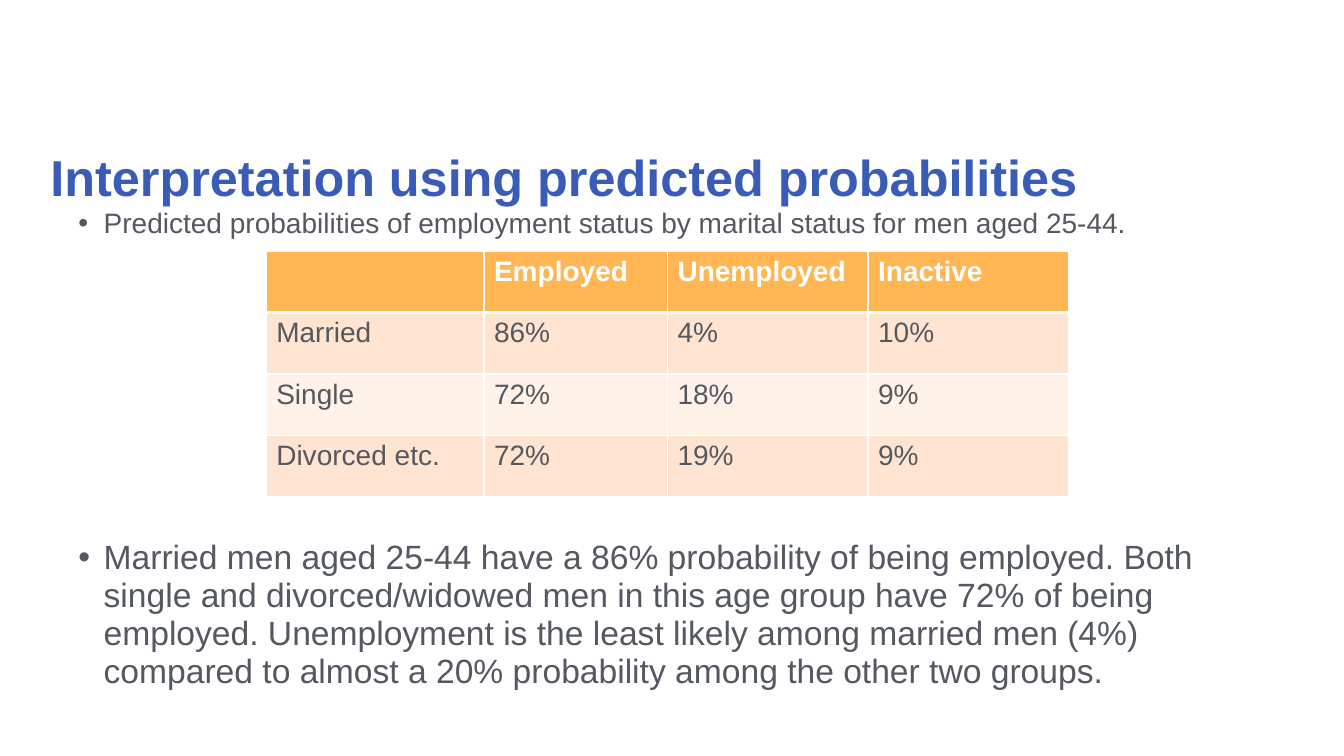
from lxml import etree
from pptx import Presentation
from pptx.dml.color import RGBColor
from pptx.enum.text import MSO_ANCHOR, MSO_AUTO_SIZE, PP_ALIGN
from pptx.oxml.ns import qn
from pptx.util import Inches, Pt

LEFT = PP_ALIGN.LEFT
TOP, MIDDLE = MSO_ANCHOR.TOP, MSO_ANCHOR.MIDDLE
NO_FIT = MSO_AUTO_SIZE.NONE
FONT = "Arial"
COLORS = {
    "title": "3A5CB7", "text": "545860", "white": "FFFFFF",
    "header": "FFB653", "band_dark": "FFE5D1", "band_light": "FFF3E9",
}
COLUMN_WIDTHS = [2.16, 1.82, 1.99, 1.99]
ROWS = [
    ["", "Employed", "Unemployed", "Inactive"],
    ["Married", "86%", "4%", "10%"],
    ["Single", "72%", "18%", "9%"],
    ["Divorced etc.", "72%", "19%", "9%"],
]
INTRO = ("Predicted probabilities of employment status by marital status "
         "for men aged 25-44.")
FINDING = ("Married men aged 25-44 have a 86% probability of being employed. "
           "Both single and divorced/widowed men in this age group have 72% of "
           "being employed. Unemployment is the least likely among married men "
           "(4%) compared to almost a 20% probability among the other two groups.")


def add_run(p, text, size, color, bold=False):
    """Add one formatted run to a paragraph."""
    r = p.add_run()
    r.text = text
    r.font.name = FONT
    r.font.size = Pt(size)
    r.font.bold = bold
    r.font.color.rgb = RGBColor.from_string(COLORS[color])


def add_title(slide, left, top, width, height):
    """Place and format the title placeholder."""
    sp = slide.shapes.title
    sp.left, sp.top = Inches(left), Inches(top)
    sp.width, sp.height = Inches(width), Inches(height)
    tf = sp.text_frame
    tf.auto_size = NO_FIT
    tf.word_wrap = True
    tf.vertical_anchor = MIDDLE
    p = tf.paragraphs[0]
    p.alignment = LEFT
    p.line_spacing = 0.9
    add_run(p, "Interpretation using predicted probabilities", 36, "title", True)


def add_bullet(slide, left, top, width, height, text, size):
    """Add a text box with one bulleted paragraph."""
    sp = slide.shapes.add_textbox(
        Inches(left), Inches(top), Inches(width), Inches(height))
    tf = sp.text_frame
    tf.auto_size = NO_FIT
    tf.word_wrap = True
    tf.vertical_anchor = TOP
    p = tf.paragraphs[0]
    pPr = p._p.get_or_add_pPr()
    pPr.set("marL", str(Inches(0.25)))
    pPr.set("indent", str(-Inches(0.25)))
    etree.SubElement(pPr, qn("a:buFont")).set("typeface", FONT)
    etree.SubElement(pPr, qn("a:buChar")).set("char", "•")
    p.alignment = LEFT
    p.line_spacing = 0.94
    add_run(p, text, size, "text")


def set_borders(cell, widths):
    """Draw white borders of the given point widths, keyed by side."""
    tcPr = cell._tc.get_or_add_tcPr()
    for side, width in widths.items():
        ln = etree.SubElement(tcPr, qn(f"a:ln{side}"), w=str(Pt(width)))
        fill = etree.SubElement(ln, qn("a:solidFill"))
        etree.SubElement(fill, qn("a:srgbClr")).set("val", COLORS["white"])


def add_probability_table(slide, left, top, height):
    """Add the table of predicted probabilities."""
    table = slide.shapes.add_table(
        len(ROWS), len(COLUMN_WIDTHS), Inches(left), Inches(top),
        Inches(sum(COLUMN_WIDTHS)), Inches(height)).table
    for column, width in zip(table.columns, COLUMN_WIDTHS):
        column.width = Inches(width)
    for i, row in enumerate(ROWS):
        table.rows[i].height = Inches(height / len(ROWS))
        header = i == 0
        band = "header" if header else "band_dark" if i % 2 else "band_light"
        borders = {"L": 1, "R": 1, "T": 3 if i == 1 else 1, "B": 3 if header else 1}
        for j, text in enumerate(row):
            cell = table.cell(i, j)
            set_borders(cell, borders)
            cell.fill.solid()
            cell.fill.fore_color.rgb = RGBColor.from_string(COLORS[band])
            if text:
                add_run(cell.text_frame.paragraphs[0], text, 20,
                        "white" if header else "text", header)


def main():
    """Build and save the slide."""
    prs = Presentation()
    prs.slide_width, prs.slide_height = Inches(13.33), Inches(7.5)
    slide = prs.slides.add_slide(prs.slide_layouts[5])
    add_title(slide, 0.4, 1.06, 12.54, 1.45)
    add_bullet(slide, 0.68, 2.02, 11.86, 0.45, INTRO, 20)
    add_probability_table(slide, 2.64, 2.49, 2.44)
    add_bullet(slide, 0.68, 5.3, 11.86, 1.75, FINDING, 24)
    prs.save("out.pptx")


if __name__ == "__main__":
    main()
